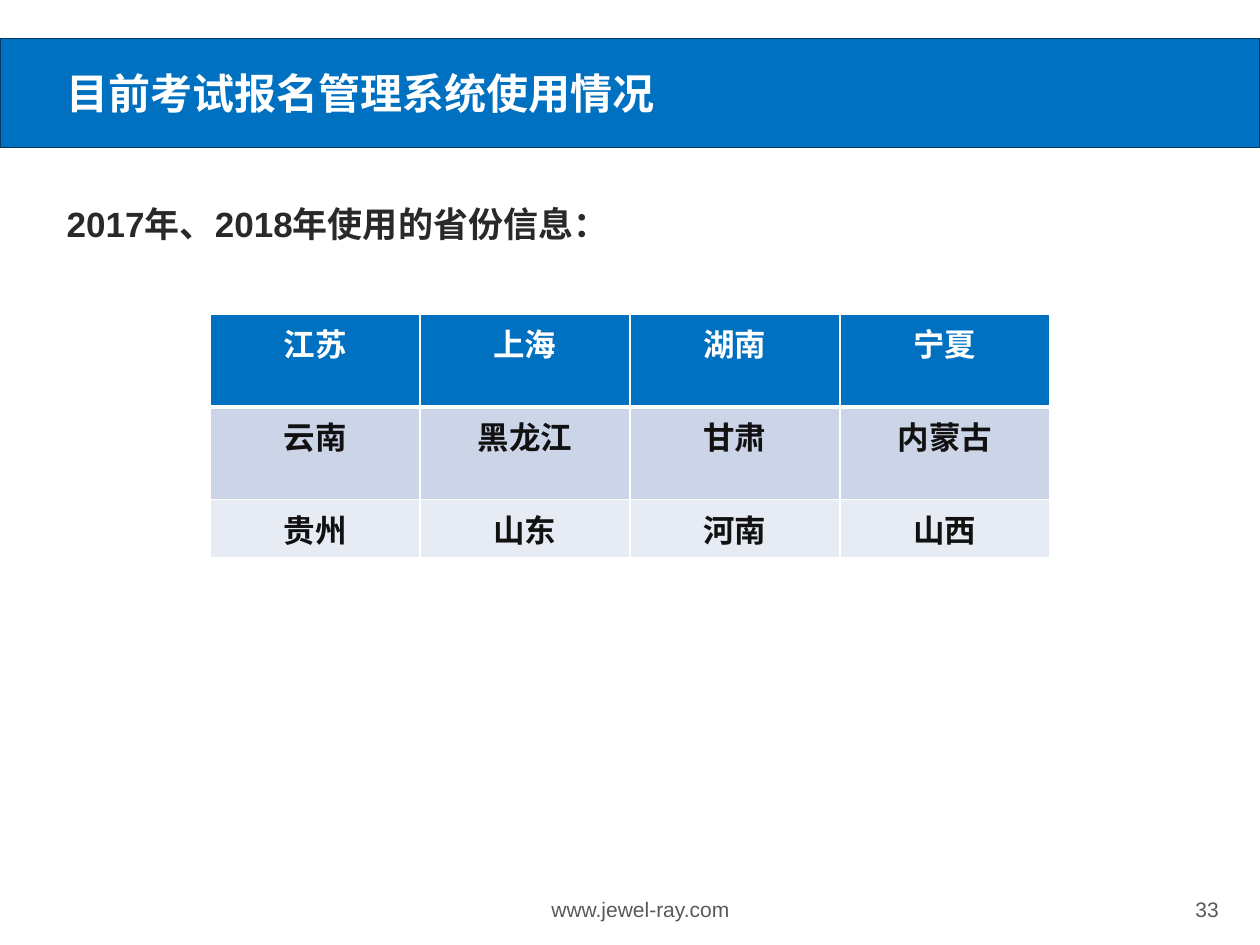
from lxml import etree
from pptx import Presentation
from pptx.dml.color import RGBColor
from pptx.enum.shapes import MSO_SHAPE
from pptx.enum.text import MSO_ANCHOR, PP_ALIGN
from pptx.oxml.ns import qn
from pptx.util import Pt

LEFT, CENTER, RIGHT = PP_ALIGN.LEFT, PP_ALIGN.CENTER, PP_ALIGN.RIGHT
TOP, MIDDLE, BOTTOM = MSO_ANCHOR.TOP, MSO_ANCHOR.MIDDLE, MSO_ANCHOR.BOTTOM
RECTANGLE = MSO_SHAPE.RECTANGLE
TITLE_ONLY = 5

BLUE, DARK_BLUE, WHITE = "0070C0", "003860", "FFFFFF"
GREY, INK, BLACK = "595959", "292929", "111111"
ROW_FILLS = [BLUE, "CCD5E8", "E7EBF4"]
ROW_HEIGHTS = [53, 53, 33]
PROVINCES = [
    ["江苏", "上海", "湖南", "宁夏"],
    ["云南", "黑龙江", "甘肃", "内蒙古"],
    ["贵州", "山东", "河南", "山西"],
]


def color(value):
    return RGBColor.from_string(value)


class SlideBuilder:
    """Holds the text style and the slide being built."""

    font = "Arial"
    title_font = "Montserrat"

    def __init__(self, deck):
        self.slide = deck.slides.add_slide(deck.slide_layouts[TITLE_ONLY])
        self.shapes = self.slide.shapes

    def set_text(self, frame, text, size, ink, bold=False, align=LEFT, font=None):
        frame.text = text
        para = frame.paragraphs[0]
        para.alignment = align
        for span in para.runs:
            span.font.name = font or self.font
            span.font.size = Pt(size)
            span.font.bold = bold
            span.font.color.rgb = color(ink)
        return para

    def band(self, left, top, width, height):
        """Draw the title band behind every other element."""
        band = self.shapes.add_shape(RECTANGLE, Pt(left), Pt(top), Pt(width), Pt(height))
        band.shadow.inherit = False
        band.fill.solid()
        band.fill.fore_color.rgb = color(BLUE)
        band.line.color.rgb = color(DARK_BLUE)
        band.line.width = Pt(0.75)
        self.shapes.element.insert(2, band.element)

    def title(self, text, left, top, width, height):
        title = self.shapes.title
        title.left, title.top, title.width, title.height = map(Pt, (left, top, width, height))
        title.text_frame.vertical_anchor = MIDDLE
        self.set_text(title.text_frame, text, 24, WHITE, bold=True, font=self.title_font)

    def text(self, text, left, top, width, height, size, ink, anchor=TOP, **style):
        box = self.shapes.add_textbox(Pt(left), Pt(top), Pt(width), Pt(height))
        box.text_frame.word_wrap = True
        box.text_frame.vertical_anchor = anchor
        return self.set_text(box.text_frame, text, size, ink, **style)

    def borders(self, cell, widths):
        """Add white left, right, top and bottom borders ahead of the cell fill."""
        properties = cell._tc.get_or_add_tcPr()
        for index, (side, width) in enumerate(zip(("lnL", "lnR", "lnT", "lnB"), widths)):
            line = etree.Element(qn(f"a:{side}"), w=str(Pt(width)))
            fill = etree.SubElement(line, qn("a:solidFill"))
            etree.SubElement(fill, qn("a:srgbClr"), val=WHITE)
            properties.insert(index, line)

    def table(self, rows, left, top, column_width):
        columns = len(rows[0])
        frame = self.shapes.add_table(len(rows), columns, Pt(left), Pt(top),
                                      Pt(column_width * columns), Pt(sum(ROW_HEIGHTS)))
        table = frame.table
        for column in table.columns:
            column.width = Pt(column_width)
        for index, names in enumerate(rows):
            table.rows[index].height = Pt(ROW_HEIGHTS[index])
            for cell, name in zip(table.rows[index].cells, names):
                cell.fill.solid()
                cell.fill.fore_color.rgb = color(ROW_FILLS[index])
                self.borders(cell, (1, 1, 3 if index == 1 else 1, 3 if index == 0 else 1))
                self.set_text(cell.text_frame, name, 18, BLACK if index else WHITE,
                              bold=True, align=CENTER)


def main():
    deck = Presentation()
    deck.slide_width, deck.slide_height = Pt(720), Pt(540)
    page = SlideBuilder(deck)
    page.band(0, 22, 720, 62.5)
    page.title("目前考试报名管理系统使用情况", 31, 24.5, 658, 57)
    heading = page.text("2017年、2018年使用的省份信息：", 31, 100, 658, 402, 20, INK, bold=True)
    heading.line_spacing = 1.5
    page.table(PROVINCES, 120, 179.5, 120)
    page.text("www.jewel-ray.com", 253.5, 508, 225, 22, 12, GREY, anchor=BOTTOM, align=CENTER)
    page.text("33", 669.5, 508, 34, 22, 12, GREY, anchor=BOTTOM, align=RIGHT)
    deck.save("out.pptx")


if __name__ == "__main__":
    main()
